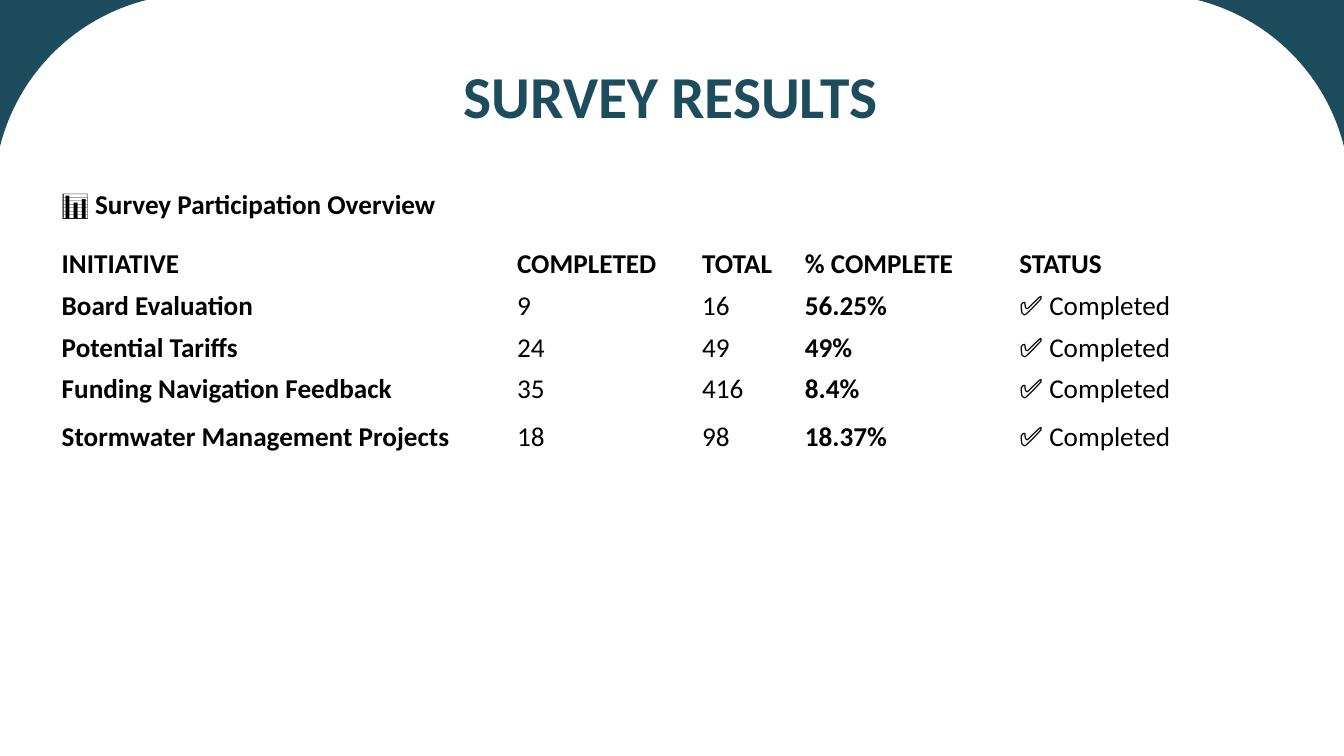
from math import acos, cos, pi, sin

from pptx import Presentation
from pptx.dml.color import RGBColor
from pptx.enum.text import MSO_ANCHOR as Anchor, PP_ALIGN as Align
from pptx.util import Inches, Pt

WIDTH, HEIGHT = Inches(21.99), Inches(12.37)
TEAL, BLACK, WHITE = "1D4D5D", "000000", "FFFFFF"

# Boxes: left, top, width, height in percent of the slide
TITLE_BOX = (4.91, 4.2, 90, 16.65)
HEADING_BOX = (4.14, 24.41, 40.11, 5.17)
TABLE_BOX = (4.14, 32.26, 92.13, 29.18)

# Corner circle, in percent of the slide width
RADIUS, CENTRE = 15, 14.55
ARC_STEPS = 40

COLUMN_SHARES = (7.45, 3.03, 1.68, 3.51, 4.59)
ROW_SHARES = (0.68, 0.68, 0.68, 0.68, 0.88)
BOLD_COLUMNS = (0, 3)
SURVEY_ROWS = (
    ("INITIATIVE", "COMPLETED", "TOTAL", "% COMPLETE", "STATUS"),
    ("Board Evaluation", "9", "16", "56.25%", "✅ Completed"),
    ("Potential Tariffs", "24", "49", "49%", "✅ Completed"),
    ("Funding Navigation Feedback", "35", "416", "8.4%", "✅ Completed"),
    ("Stormwater Management Projects", "18", "98", "18.37%", "✅ Completed"),
)


def paint(color_format, color):
    color_format.rgb = RGBColor.from_string(color)


def place(box):
    left, top, width, height = box
    return [round(share * side / 100) for share, side in
            ((left, WIDTH), (top, HEIGHT), (width, WIDTH), (height, HEIGHT))]


def write(frame, text, size, color, bold, align=Align.LEFT):
    frame.text = text
    para = frame.paragraphs[0]
    para.alignment = align
    font = para.runs[0].font
    font.name, font.size, font.bold = "Calibri", Pt(size), bold
    paint(font.color, color)


def add_corner(page, mirrored):
    """Fill what lies between a top corner and the circle beside it."""
    start = acos(CENTRE / RADIUS)
    sweep = pi / 2 - 2 * start
    angles = [start + sweep * step / ARC_STEPS for step in range(ARC_STEPS + 1)]
    points = [(0, 0)] + [(CENTRE - RADIUS * cos(angle), CENTRE - RADIUS * sin(angle))
                         for angle in angles]
    outline = [(round((100 - x if mirrored else x) * WIDTH / 100), round(y * WIDTH / 100))
               for x, y in points]
    builder = page.shapes.build_freeform(*outline[0])
    builder.add_line_segments(outline[1:], close=True)
    corner = builder.convert_to_shape()
    corner.shadow.inherit = False
    corner.fill.solid()
    paint(corner.fill.fore_color, TEAL)
    corner.line.fill.background()


def add_text(page, box, text, size, color, align=Align.LEFT, anchor=Anchor.TOP):
    frame = page.shapes.add_textbox(*place(box)).text_frame
    frame.word_wrap = True
    frame.vertical_anchor = anchor
    write(frame, text, size, color, True, align)


def add_survey_table(page, box):
    left, top, width, height = place(box)
    table = page.shapes.add_table(len(SURVEY_ROWS), len(COLUMN_SHARES),
                                  left, top, width, height).table
    table.first_row = table.horz_banding = False
    for column, share in zip(table.columns, COLUMN_SHARES):
        column.width = round(width * share / sum(COLUMN_SHARES))
    for row, share in zip(table.rows, ROW_SHARES):
        row.height = round(height * share / sum(ROW_SHARES))
    for row_index, texts in enumerate(SURVEY_ROWS):
        for column_index, text in enumerate(texts):
            cell = table.cell(row_index, column_index)
            cell.fill.background()
            cell.vertical_anchor = Anchor.MIDDLE
            bold = row_index == 0 or column_index in BOLD_COLUMNS
            write(cell.text_frame, text, 32, BLACK, bold)


def build_survey_slide(deck):
    page = deck.slides.add_slide(deck.slide_layouts[6])
    page.background.fill.solid()
    paint(page.background.fill.fore_color, WHITE)

    # Corner decoration
    for mirrored in (True, False):
        add_corner(page, mirrored)

    # Title, table and its heading
    add_text(page, TITLE_BOX, "SURVEY RESULTS", 70, TEAL, Align.CENTER, Anchor.MIDDLE)
    add_survey_table(page, TABLE_BOX)
    add_text(page, HEADING_BOX, "📊 Survey Participation Overview", 32, BLACK)


def main():
    deck = Presentation()
    deck.slide_width, deck.slide_height = WIDTH, HEIGHT
    build_survey_slide(deck)
    deck.save("out.pptx")


if __name__ == "__main__":
    main()
